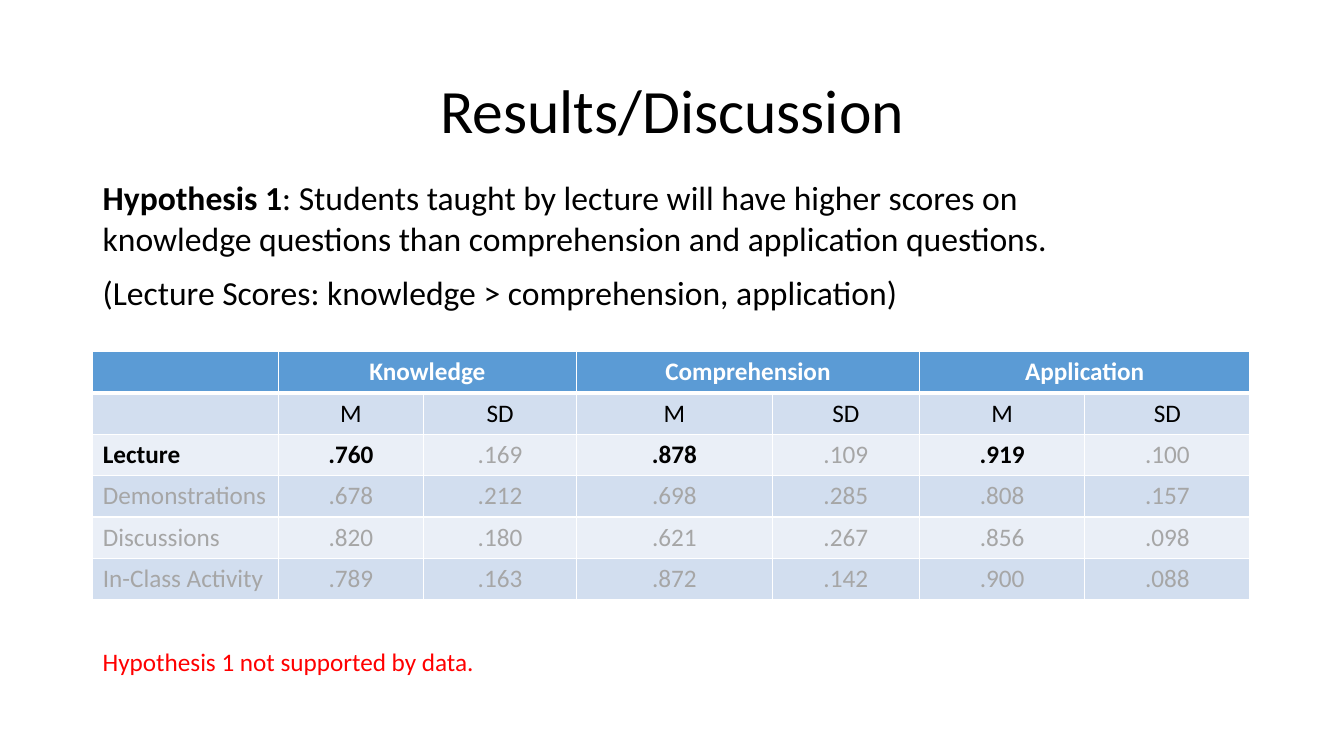
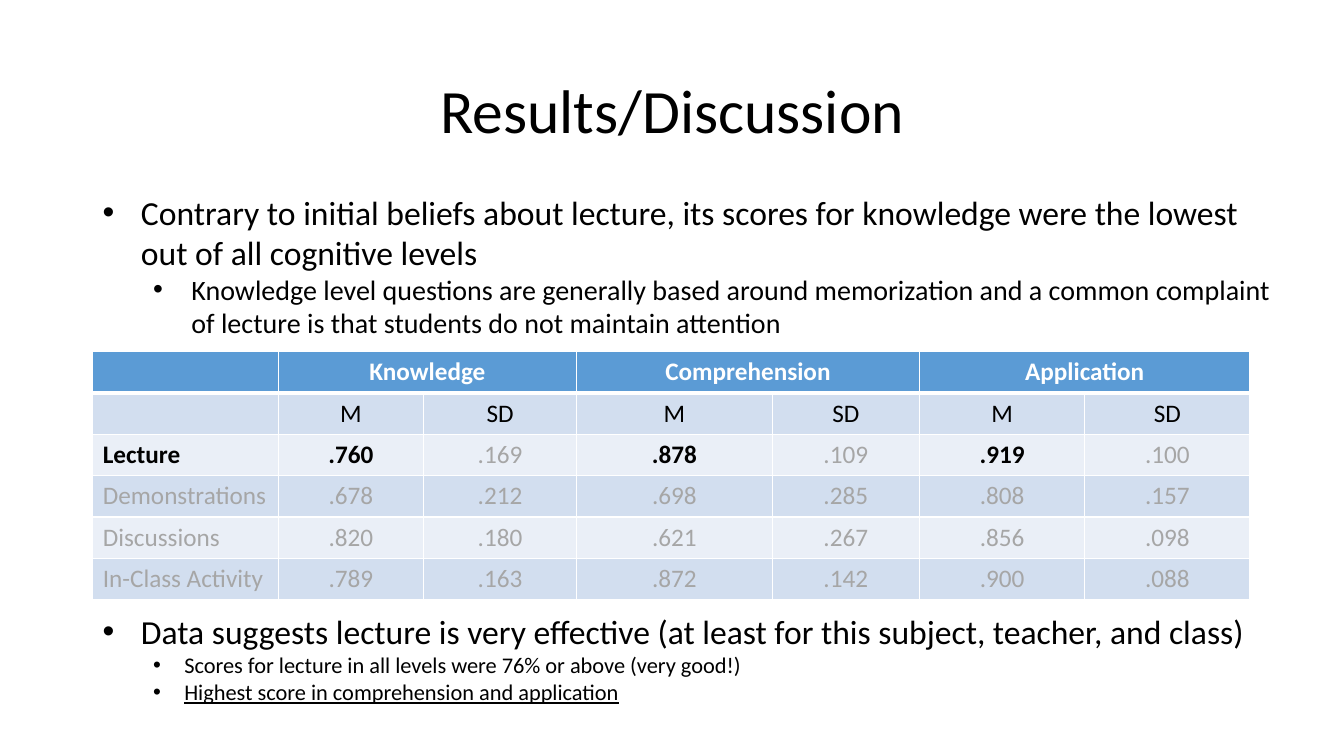
import lxml.etree
import pptx
import pptx.dml.color
import pptx.enum.text
import pptx.oxml.ns
import pptx.util

Inches = pptx.util.Inches
Pt = pptx.util.Pt
ALIGN = pptx.enum.text.PP_ALIGN
ANCHOR = pptx.enum.text.MSO_ANCHOR

FONT = "Calibri"
COLORS = {
    "ink": "000000",
    "white": "FFFFFF",
    "red": "FF0000",
    "gray": "A6A6A6",
    "head": "5B9BD5",
    "dark": "D2DEEF",
    "light": "EAEFF7",
}
LEFT = 0.92
WIDTH = 11.5
COLS = [1.84, 1.44, 1.52, 1.94, 1.46, 1.64, 1.64]
ROW = 0.41
LEVELS = ["Knowledge", "Comprehension", "Application"]
SCORES = [
    ["Lecture", ".760", ".169", ".878", ".109", ".919", ".100"],
    ["Demonstrations", ".678", ".212", ".698", ".285", ".808", ".157"],
    ["Discussions", ".820", ".180", ".621", ".267", ".856", ".098"],
    ["In-Class Activity", ".789", ".163", ".872", ".142", ".900", ".088"],
]


def color(name):
    return pptx.dml.color.RGBColor.from_string(COLORS[name])


def add(node, tag, **attrs):
    return lxml.etree.SubElement(node, pptx.oxml.ns.qn(tag), **attrs)


def write(par, text, size=18, ink="ink", bold=False, under=False):
    """Append one formatted run to a paragraph."""
    run = par.add_run()
    run.text = text
    font = run.font
    font.name, font.size, font.bold = FONT, Pt(size), bold
    font.underline = under
    font.color.rgb = color(ink)


def bullet(par, left, hang):
    """Give a paragraph a dot with a hanging indent."""
    props = par._p.get_or_add_pPr()
    props.set("marL", str(Inches(left)))
    props.set("indent", str(Inches(-hang)))
    add(props, "a:buFont", typeface="Arial")
    add(props, "a:buChar", char="•")


def border(cell, top, bottom):
    """Draw white cell borders; top and bottom are widths in points."""
    props = cell._tc.get_or_add_tcPr()
    for side, width in zip("LRTB", (1, 1, top, bottom)):
        line = add(props, "a:ln" + side, w=str(Pt(width)))
        add(add(line, "a:solidFill"), "a:srgbClr", val=COLORS["white"])


class Deck:
    def __init__(self):
        self.pres = pptx.Presentation()
        self.pres.slide_width = Inches(13.33)
        self.pres.slide_height = Inches(7.5)
        self.slide = None

    def page(self, title):
        self.slide = self.pres.slides.add_slide(self.pres.slide_layouts[6])
        frame = self.box(LEFT, 0.4, WIDTH, 1.45)
        frame.vertical_anchor = ANCHOR.MIDDLE
        par = frame.paragraphs[0]
        par.alignment = ALIGN.CENTER
        par.line_spacing = 0.9
        write(par, title, size=44)

    def box(self, left, top, width, height):
        place = [Inches(n) for n in (left, top, width, height)]
        frame = self.slide.shapes.add_textbox(*place).text_frame
        frame.word_wrap = True
        return frame

    def points(self, left, top, width, height, items):
        """Add a bulleted list of (text, indent, hang, format) items."""
        frame = self.box(left, top, width, height)
        for num, (text, indent, hang, style) in enumerate(items):
            par = frame.add_paragraph() if num else frame.paragraphs[0]
            bullet(par, indent, hang)
            write(par, text, **style)

    def scores(self):
        heads = [""]
        for level in LEVELS:
            heads += [level, ""]
        rows = [heads, [""] + ["M", "SD"] * len(LEVELS)] + SCORES
        table = self.slide.shapes.add_table(
            len(rows), len(COLS), Inches(LEFT), Inches(3.49),
            Inches(WIDTH), Inches(ROW * len(rows))).table
        table.horz_banding = False
        for col, width in zip(table.columns, COLS):
            col.width = Inches(width)
        for y, row in enumerate(rows):
            table.rows[y].height = Inches(ROW)
            for x, text in enumerate(row):
                self.cell(table.cell(y, x), y, x, text)
        for x in range(1, len(COLS), 2):
            table.cell(0, x).merge(table.cell(0, x + 1))

    def cell(self, cell, y, x, text):
        border(cell, 3 if y == 1 else 1, 3 if y == 0 else 1)
        cell.fill.solid()
        band = "dark" if y % 2 else "light"
        cell.fill.fore_color.rgb = color(band if y else "head")
        if not text:
            return
        par = cell.text_frame.paragraphs[0]
        par.alignment = ALIGN.CENTER if x else ALIGN.LEFT
        key = y == 2 and (x == 0 or x % 2 == 1)
        if y == 0:
            ink = "white"
        else:
            ink = "ink" if y == 1 or key else "gray"
        write(par, text, ink=ink, bold=y == 0 or key)


def main():
    deck = Deck()

    deck.page("Results/Discussion")
    frame = deck.box(LEFT, 1.71, 10.48, 1.45)
    claim, short = frame.paragraphs[0], frame.add_paragraph()
    claim.space_before = short.space_before = Pt(10)
    write(claim, "Hypothesis 1", size=24, bold=True)
    write(claim, ": Students taught by lecture will have higher scores on "
          "knowledge questions than comprehension and application questions.",
          size=24)
    write(short, "(Lecture Scores: knowledge > comprehension, application)",
          size=24)
    note = deck.box(LEFT, 6.36, 3.93, 0.4)
    write(note.paragraphs[0], "Hypothesis 1 not supported by data.", ink="red")
    deck.scores()

    deck.page("Results/Discussion")
    deck.scores()
    deck.points(LEFT, 1.85, 11.85, 1.88, [
        ("Contrary to initial beliefs about lecture, its scores for knowledge "
         "were the lowest out of all cognitive levels",
         0.38, 0.38, {"size": 24}),
        ("Knowledge level questions are generally based around memorization "
         "and a common complaint of lecture is that students do not maintain "
         "attention", 0.88, 0.38, {"size": 20}),
    ])
    deck.points(LEFT, 6.01, 11.63, 1.35, [
        ("Data suggests lecture is very effective (at least for this subject, "
         "teacher, and class)", 0.38, 0.38, {"size": 24}),
        ("Scores for lecture in all levels were 76% or above (very good!)",
         0.81, 0.31, {"size": 16}),
        ("Highest score in comprehension and application",
         0.81, 0.31, {"size": 16, "under": True}),
    ])

    deck.pres.save("out.pptx")


if __name__ == "__main__":
    main()
